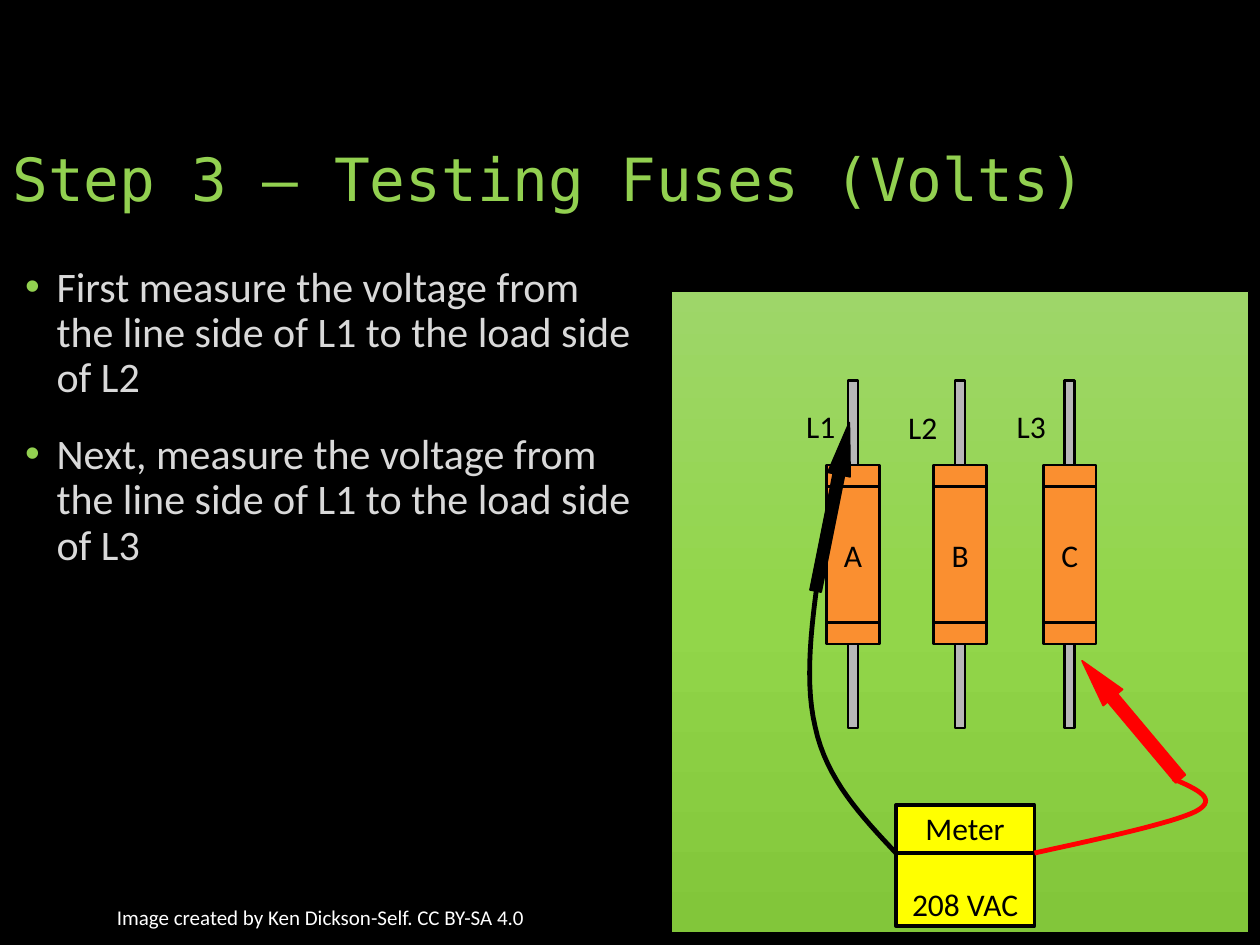
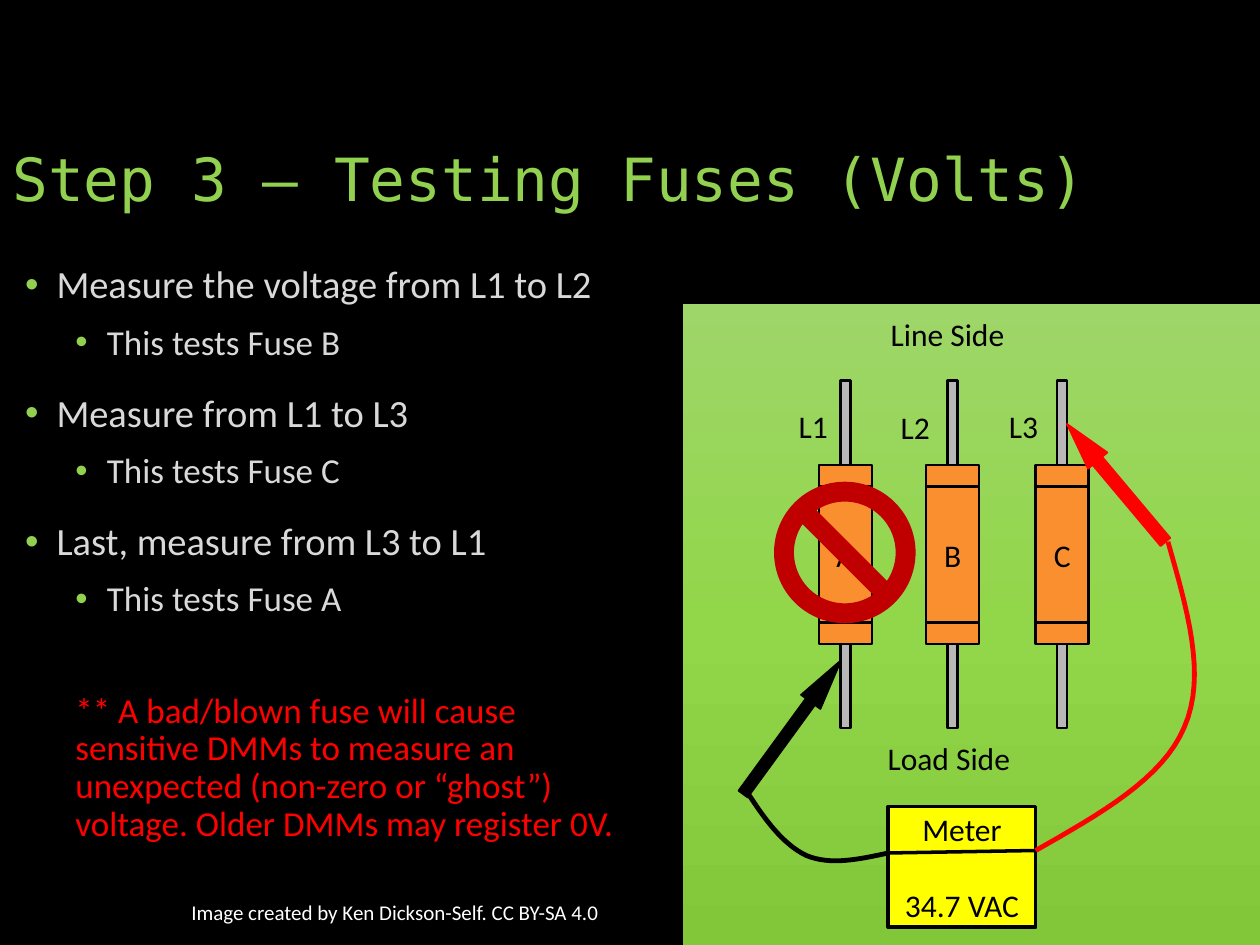
from copy import deepcopy
from lxml.etree import SubElement
from pptx import Presentation
from pptx.dml.color import RGBColor
from pptx.enum.shapes import MSO_CONNECTOR, MSO_SHAPE
from pptx.enum.text import MSO_ANCHOR, PP_ALIGN
from pptx.oxml.ns import qn
from pptx.util import Pt

PX = 9144
BLACK = RGBColor(0x00, 0x00, 0x00)
WHITE = RGBColor(0xFF, 0xFF, 0xFF)
LIGHT = RGBColor(0xD9, 0xD9, 0xD9)
GREEN = RGBColor(0x92, 0xD0, 0x50)
RED = RGBColor(0xFF, 0x00, 0x00)
DARK_RED = RGBColor(0xC0, 0x00, 0x00)
ORANGE = RGBColor(0xFA, 0x8F, 0x30)
GRAY = RGBColor(0xB8, 0xB8, 0xB8)
YELLOW = RGBColor(0xFF, 0xFF, 0x00)
PANEL = [
    (0, RGBColor(0x9E, 0xD6, 0x69)),
    (0.5, RGBColor(0x92, 0xD6, 0x4A)),
    (1, RGBColor(0x82, 0xC6, 0x3A)),
]
BODY_FONT = "Calibri"
TITLE_FONT = "DejaVu Sans Mono"
TITLE = "Step 3 – Testing Fuses (Volts)"
CREDIT = "Image created by Ken Dickson-Self. CC BY-SA 4.0"
TRIANGLE, RECT = MSO_SHAPE.ISOSCELES_TRIANGLE, MSO_SHAPE.RECTANGLE
LEFT, CENTER = PP_ALIGN.LEFT, PP_ALIGN.CENTER

SLIDES = [
    {
        "body": [
            (0, 24, 18, LIGHT, "First measure the voltage from the line side of L1 to the load side of L2"),
            (0, 24, 18, LIGHT, "Next, measure the voltage from the line side of L1 to the load side of L3"),
        ],
        "panel": (533, 231),
        "shift": 0,
        "sides": [],
        "meter": (711, 639, 110, "208 VAC"),
        "meter_line": (711, 677, 821, 677),
        "leads": [
            (RED, [(821, 677), (876, 665), (931, 653), (949, 644), (968, 634), (949, 626), (931, 618)]),
            (BLACK, [(711, 677), (684, 648), (656, 619), (647, 577), (637, 535), (646, 481), (654, 426)]),
        ],
        "probes": [
            (TRIANGLE, 661, 335, 18, 42, 11.3, BLACK),
            (RECT, 652, 376, 9, 94, 11.3, BLACK),
            (TRIANGLE, 861, 520, 20, 38, 320, RED),
            (RECT, 905, 544, 10, 84, 320, RED),
        ],
        "bad_fuse": None,
        "credit": (83, 713),
    },
    {
        "body": [
            (0, 22, 18, LIGHT, "Measure the voltage from L1 to L2"),
            (1, 20, 10, LIGHT, "This tests Fuse B"),
            (0, 22, 18, LIGHT, "Measure from L1 to L3"),
            (1, 20, 10, LIGHT, "This tests Fuse C"),
            (0, 22, 18, LIGHT, "Last, measure from L3 to L1"),
            (1, 20, 10, LIGHT, "This tests Fuse A"),
            (2, 20, 42, RED, "** A bad/blown fuse will cause sensitive DMMs to measure an unexpected "
                             "(non-zero or “ghost”) voltage. Older DMMs may register 0V."),
        ],
        "panel": (542, 241),
        "shift": -6,
        "sides": [(666, 245, "Line Side"), (667, 582, "Load Side")],
        "meter": (705, 640, 117, "34.7 VAC"),
        "meter_line": (705, 677, 822, 675),
        "leads": [
            (RED, [(822, 675), (873, 646), (923, 618), (940, 577), (958, 536), (942, 483), (927, 430)]),
            (BLACK, [(705, 677), (682, 682), (659, 687), (640, 679), (621, 670), (606, 649), (592, 627)]),
        ],
        "probes": [
            (TRIANGLE, 646, 520, 19, 41, 36.1, BLACK),
            (RECT, 612, 548, 9, 91, 36.1, BLACK),
            (TRIANGLE, 849, 332, 20, 38, 320, RED),
            (RECT, 893, 356, 10, 84, 320, RED),
        ],
        "bad_fuse": (615, 383, 111, 111),
        "credit": (142, 709),
    },
]
INDENTS = [(25, -25), (65, -25), (40, 0)]


def add_box(s, kind, x, y, w, h, fill, line=BLACK, pt=1.5, rot=0):
    sp = s.shapes.add_shape(kind, x * PX, y * PX, w * PX, h * PX)
    sp.shadow.inherit = False
    sp.fill.solid()
    sp.fill.fore_color.rgb = fill
    sp.line.color.rgb = line
    sp.line.width = Pt(pt)
    sp.rotation = rot
    tf = sp.text_frame
    tf.margin_left = tf.margin_right = 0
    tf.vertical_anchor = MSO_ANCHOR.MIDDLE
    return sp


def add_text(tf, text, size, color=BLACK, align=LEFT, font=BODY_FONT):
    tf.word_wrap = True
    p = tf.add_paragraph() if tf.text else tf.paragraphs[0]
    p.alignment = align
    r = p.add_run()
    r.text = text
    r.font.size = Pt(size)
    r.font.name = font
    r.font.color.rgb = color
    return p


prs = Presentation()
prs.slide_width, prs.slide_height = 1000 * PX, 750 * PX

for data in SLIDES:
    s = prs.slides.add_slide(prs.slide_layouts[6])
    s.background.fill.solid()
    s.background.fill.fore_color.rgb = BLACK

    tf = s.shapes.add_textbox(0, 50 * PX, 1066 * PX, 125 * PX).text_frame
    tf.vertical_anchor = MSO_ANCHOR.BOTTOM
    add_text(tf, TITLE, 34, GREEN, font=TITLE_FONT).line_spacing = 0.9

    tf = s.shapes.add_textbox(10 * PX, 206 * PX, 509 * PX, 542 * PX).text_frame
    for level, size, before, color, text in data["body"]:
        p = add_text(tf, text, size, color)
        p.line_spacing = 0.9
        p.space_before = Pt(before)
        margin, indent = INDENTS[level]
        pPr = p._p.get_or_add_pPr()
        pPr.set("marL", str(margin * PX))
        pPr.set("indent", str(indent * PX))
        if indent:
            SubElement(SubElement(pPr, qn("a:buClr")), qn("a:srgbClr")).set("val", str(GREEN))
            SubElement(pPr, qn("a:buFont")).set("typeface", "Arial")
            SubElement(pPr, qn("a:buChar")).set("char", "•")

    panel = add_box(s, RECT, *data["panel"], 458, 509, WHITE, pt=0.5)
    panel.fill.gradient()
    panel.fill.gradient_angle = 270
    gs = panel._element.spPr.find(".//" + qn("a:gs"))
    gs.addnext(deepcopy(gs))
    for stop, (position, color) in zip(panel.fill.gradient_stops, PANEL):
        stop.position = position
        stop.color.rgb = color

    lines = [(*data["meter_line"], 2)]
    labels = [(x, y, 172, text, CENTER) for x, y, text in data["sides"]]
    for i, (name, fuse_x, label_x) in enumerate(zip("ABC", (656, 741, 828), (630, 711, 797))):
        x = fuse_x + data["shift"]
        for y in (302, 511):
            add_box(s, RECT, x + 17, y, 8, 67, GRAY)
        fuse = add_box(s, RECT, x, 369, 42, 142, ORANGE)
        add_text(fuse.text_frame, name, 18, align=CENTER)
        lines.append((x, 386, x + 42, 386, 1.5 if i else 2))
        lines.append((x, 494, x + 42, 494, 2))
        labels.append((label_x + data["shift"], 319 if i == 1 else 318, 47, f"L{i + 1}", LEFT))

    for x, y, w, text, align in labels:
        tf = s.shapes.add_textbox(x * PX, y * PX, w * PX, 40 * PX).text_frame
        add_text(tf, text, 18, align=align)

    x, y, w, reading = data["meter"]
    tf = add_box(s, RECT, x, y, w, 96, YELLOW, pt=2).text_frame
    add_text(tf, "Meter", 18, align=CENTER)
    add_text(tf, reading, 18, align=CENTER).space_before = Pt(22)

    for x1, y1, x2, y2, pt in lines:
        line = s.shapes.add_connector(MSO_CONNECTOR.STRAIGHT, x1 * PX, y1 * PX, x2 * PX, y2 * PX)
        line.line.color.rgb = BLACK
        line.line.width = Pt(pt)
        SubElement(line._element.spPr, qn("a:effectLst"))

    for color, pts in data["leads"]:
        fb = s.shapes.build_freeform(pts[0][0] * PX, pts[0][1] * PX)
        curve = []
        for k in (0, 3):
            for t in (n / 16 for n in range(1, 17)):
                weights = ((1 - t) ** 3, 3 * t * (1 - t) ** 2, 3 * t * t * (1 - t), t ** 3)
                curve.append(tuple(
                    round(sum(a * pt[axis] for a, pt in zip(weights, pts[k:k + 4])) * PX)
                    for axis in (0, 1)
                ))
        fb.add_line_segments(curve, close=False)
        lead = fb.convert_to_shape()
        lead.shadow.inherit = False
        lead.fill.background()
        lead.line.color.rgb = color
        lead.line.width = Pt(2.75)

    for kind, x, y, w, h, rot, color in data["probes"]:
        add_box(s, kind, x, y, w, h, color, color, 1, rot)

    if data["bad_fuse"]:
        sign = add_box(s, MSO_SHAPE.NO_SYMBOL, *data["bad_fuse"], DARK_RED, DARK_RED, 1)
        sign.adjustments[0] = 0.13

    x, y = data["credit"]
    tf = s.shapes.add_textbox(x * PX, y * PX, 400 * PX, 30 * PX).text_frame
    add_text(tf, CREDIT, 12, WHITE)

prs.save("out.pptx")
